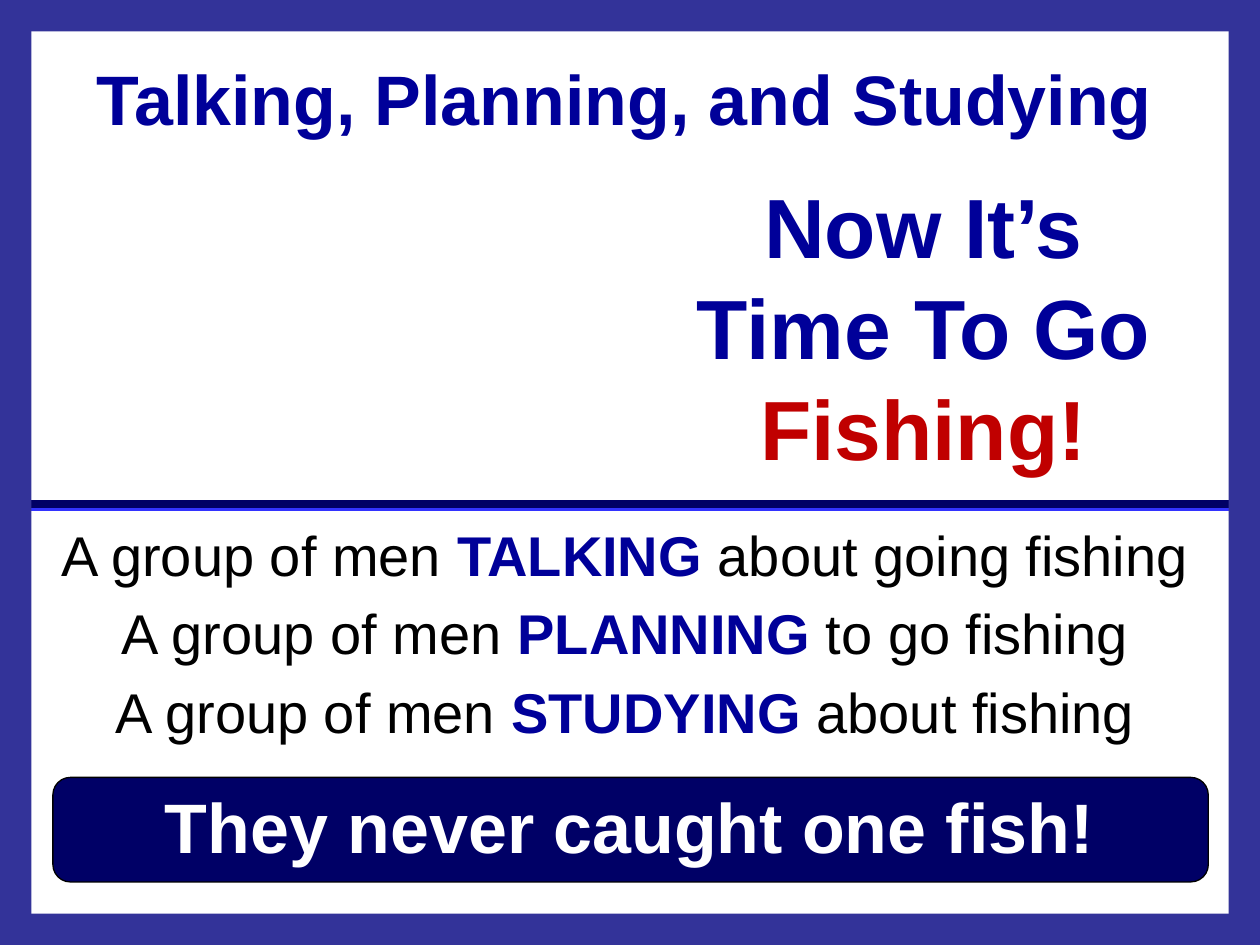
from lxml.etree import SubElement
from pptx import Presentation
from pptx.dml.color import RGBColor
from pptx.enum.shapes import MSO_CONNECTOR, MSO_SHAPE
from pptx.enum.text import MSO_ANCHOR, MSO_AUTO_SIZE, PP_ALIGN
from pptx.oxml.ns import qn
from pptx.util import Inches, Pt

NAVY, BLUE, FRAME = "000066", "000099", "333399"
BLACK, WHITE, RED = "000000", "FFFFFF", "C00000"


def color(hex):
    """Turn a hex string into a colour."""
    return RGBColor.from_string(hex)


def style(para, size, hex, bold=False):
    """Centre a paragraph and set its font."""
    para.alignment = PP_ALIGN.CENTER
    font = para.font
    font.name, font.size, font.bold = "Arial", Pt(size), bold
    font.color.rgb = color(hex)


def add_run(para, text, hex=None, bold=None):
    """Add a run with an optional colour and weight."""
    run = para.add_run()
    run.text = text
    if hex:
        run.font.color.rgb = color(hex)
    if bold:
        run.font.bold = bold


def add_box(slide, *place):
    """Add a wrapping text box and return its frame."""
    frame = slide.shapes.add_textbox(*map(Inches, place)).text_frame
    frame.word_wrap = True
    return frame


def add_label(slide, text, hex, *place):
    """Add one large bold line of text."""
    para = add_box(slide, *place).paragraphs[0]
    para.text = text
    style(para, 40, hex, True)


def add_panel(slide, kind, fill, *place):
    """Add a filled shape with no outline."""
    shape = slide.shapes.add_shape(kind, *map(Inches, place))
    shape.shadow.inherit = False
    shape.fill.solid()
    shape.fill.fore_color.rgb = color(fill)
    shape.line.fill.background()
    return shape


def add_rule(slide):
    """Add the dividing line with its bright lower edge."""
    ends = map(Inches, (0.17, 4, 9.75, 4))
    rule = slide.shapes.add_connector(MSO_CONNECTOR.STRAIGHT, *ends)
    rule.line.color.rgb = color(NAVY)
    rule.line.width = Pt(4.5)
    effects = SubElement(rule._element.spPr, qn("a:effectLst"))
    shadow = SubElement(effects, qn("a:outerShdw"), dist=str(Pt(2.8)),
                        dir="2700000", algn="ctr", rotWithShape="0")
    SubElement(shadow, qn("a:srgbClr"), val="3333FF")


def add_title(slide):
    """Fill and place the title."""
    title = slide.shapes.title
    title.left, title.top = Inches(5.33), Inches(1.25)
    title.width, title.height = Inches(4), Inches(2.67)
    frame = title.text_frame
    frame.word_wrap = True
    frame.auto_size = MSO_AUTO_SIZE.NONE
    frame.vertical_anchor = MSO_ANCHOR.MIDDLE
    para = frame.paragraphs[0]
    style(para, 48, BLUE, True)
    add_run(para, "Now It’s Time To Go ")
    add_run(para, "Fishing!", RED)


def add_story(slide):
    """Add the lines about the men, with the key verbs in bold."""
    frame = add_box(slide, 0.25, 4.08, 9.42, 1.92)
    lines = (("TALKING", "about going fishing"),
             ("PLANNING", "to go fishing"),
             ("STUDYING", "about fishing"))
    for row, (verb, rest) in enumerate(lines):
        para = frame.add_paragraph() if row else frame.paragraphs[0]
        style(para, 32, BLACK)
        if row:
            para.space_before = Pt(6.4)
        add_run(para, "A group of men ")
        add_run(para, verb, BLUE, True)
        add_run(para, f" {rest}")


def main():
    """Build and save the slide."""
    deck = Presentation()
    deck.slide_width, deck.slide_height = Inches(10), Inches(7.5)
    slide = deck.slides.add_slide(deck.slide_layouts[5])
    add_title(slide)
    add_story(slide)
    add_rule(slide)
    banner = add_panel(slide, MSO_SHAPE.ROUNDED_RECTANGLE, NAVY,
                       0.42, 6.17, 9.17, 0.83)
    banner.line.color.rgb = color(BLACK)
    banner.line.width = Pt(0.75)
    add_label(slide, "They never caught one fish!", WHITE,
              0.33, 6.17, 9.33, 0.77)
    for place in ((0, 0, 10, 0.25), (0, 7.25, 10, 0.25),
                  (0, 0, 0.25, 7.5), (9.75, 0, 0.25, 7.5)):
        add_panel(slide, MSO_SHAPE.RECTANGLE, FRAME, *place)
    add_label(slide, "Talking, Planning, and Studying", BLUE,
              0.33, 0.39, 9.25, 0.77)
    deck.save("out.pptx")


if __name__ == "__main__":
    main()
